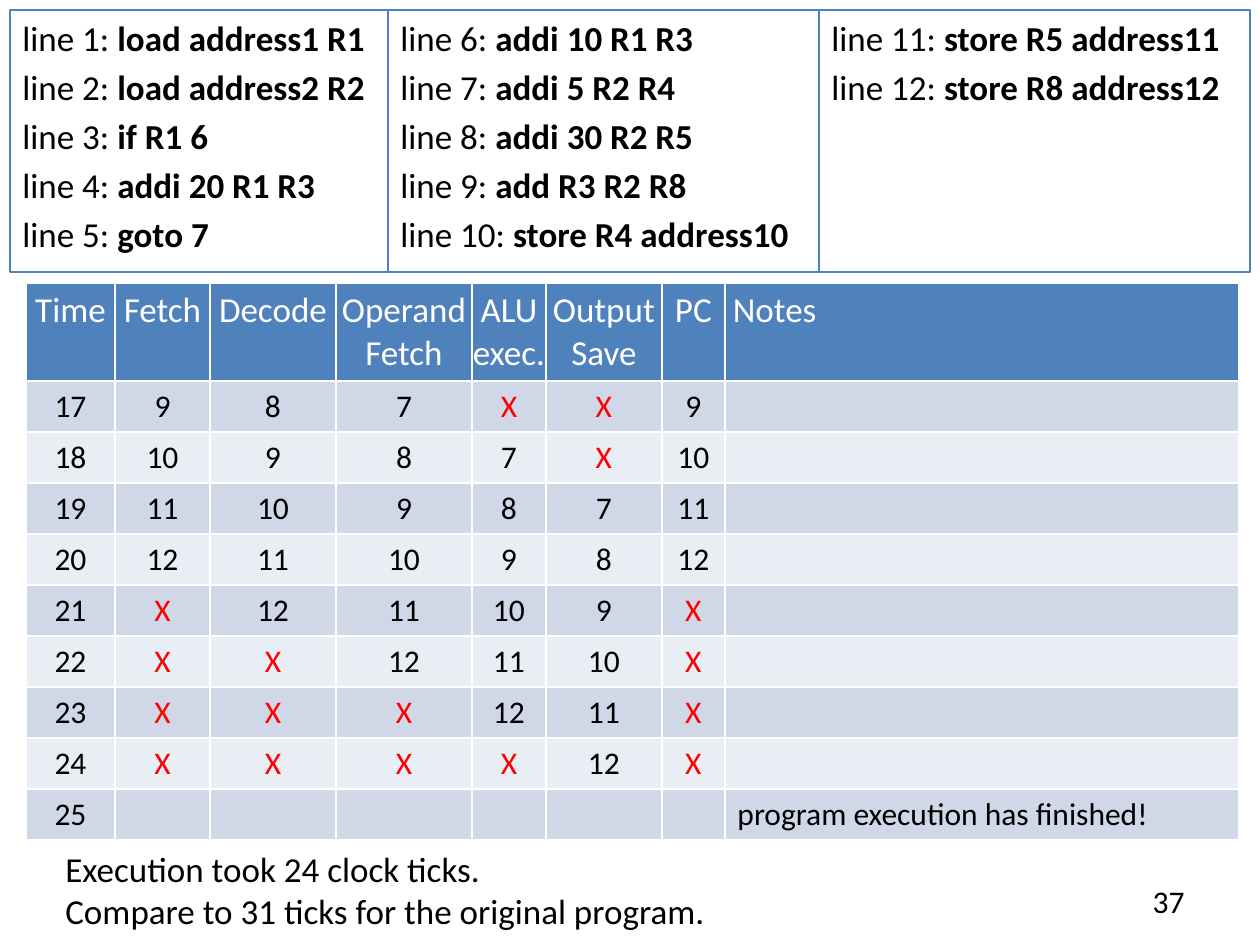
from pptx import Presentation
from pptx.dml.color import RGBColor
from pptx.enum.shapes import MSO_SHAPE
from pptx.enum.text import MSO_ANCHOR as Anchor, MSO_AUTO_SIZE as Auto, PP_ALIGN as Align
from pptx.util import Pt

FONT = "Calibri"
BLUE, BLACK, WHITE, RED = "4F81BD", "000000", "FFFFFF", "FF0000"
BANDS = "D0D8E8", "E9EDF4"

# (left, width, first line number, commands)
CODE = [
    (10, 378, 1, ["load address1 R1", "load address2 R2", "if R1 6",
                  "addi 20 R1 R3", "goto 7"]),
    (388, 431, 6, ["addi 10 R1 R3", "addi 5 R2 R4", "addi 30 R2 R5",
                   "add R3 R2 R8", "store R4 address10"]),
    (819, 431, 11, ["store R5 address11", "store R8 address12"]),
]
COLS = [("Time", 89), ("Fetch", 95), ("Decode", 126), ("Operand Fetch", 136),
        ("ALU exec.", 74), ("Output Save", 116), ("PC", 63), (" Notes", 514)]
TICKS = [
    "17 9 8 7 X X 9",
    "18 10 9 8 7 X 10",
    "19 11 10 9 8 7 11",
    "20 12 11 10 9 8 12",
    "21 X 12 11 10 9 X",
    "22 X X 12 11 10 X",
    "23 X X X 12 11 X",
    "24 X X X X 12 X",
    "25",
]
DONE = "program execution has finished!"
SUMMARY = "Execution took 24 clock ticks. \vCompare to 31 ticks for the original program."
PAGE = "37"
HEAD, ROW = 98, 51


def px(n):
    return round(n * 914400 / 126)


def box(*sides):
    return [px(n) for n in sides]


def rgb(code):
    return RGBColor.from_string(code)


def style(para, size, color=BLACK, align=Align.LEFT):
    font = para.font
    font.name, font.size, font.bold = FONT, Pt(size), False
    font.color.rgb = rgb(color)
    para.alignment = align


def list_code(slide, left, width, first, lines):
    shape = slide.shapes.add_shape(MSO_SHAPE.RECTANGLE, *box(left, 10, width, 262))
    shape.shadow.inherit = False
    shape.fill.background()
    shape.line.color.rgb = rgb(BLUE)
    shape.line.width = Pt(0.75)
    frame = shape.text_frame
    frame.word_wrap = True
    frame.vertical_anchor = Anchor.TOP
    for i, line in enumerate(lines):
        para = frame.add_paragraph() if i else frame.paragraphs[0]
        para.space_before = Pt(4)
        style(para, 20)
        para.add_run().text = f"line {first + i}: "
        run = para.add_run()
        run.text = line
        run.font.bold = True


def fill_cell(cell, text, fill, size, color, align):
    cell.fill.solid()
    cell.fill.fore_color.rgb = rgb(fill)
    cell.text = text
    style(cell.text_frame.paragraphs[0], size, color, align)


def draw_ticks(slide):
    wide = sum(w for _, w in COLS)
    high = HEAD + ROW * len(TICKS)
    table = slide.shapes.add_table(len(TICKS) + 1, len(COLS),
                                   *box(26, 283, wide, high)).table
    last = len(COLS) - 1
    for c, (name, width) in enumerate(COLS):
        align = Align.LEFT if c == last else Align.CENTER
        table.columns[c].width = px(width)
        cell = table.cell(0, c)
        cell.margin_left = cell.margin_right = 0
        fill_cell(cell, name, BLUE, 20, WHITE, align)
        for r, tick in enumerate(TICKS):
            vals = tick.split()
            text = vals[c] if c < len(vals) else ""
            if c == last and r == len(TICKS) - 1:
                text = DONE
            cell = table.cell(r + 1, c)
            cell.vertical_anchor = Anchor.MIDDLE
            fill_cell(cell, text, BANDS[r % 2], 18, RED if text == "X" else BLACK, align)
    for r, row in enumerate(table.rows):
        row.height = px(ROW if r else HEAD)


def add_text(slide, place, text, size, align=Align.LEFT):
    frame = slide.shapes.add_textbox(*box(*place)).text_frame
    frame.text = text
    style(frame.paragraphs[0], size, align=align)
    return frame


def main():
    deck = Presentation()
    deck.slide_width, deck.slide_height = box(1260, 945)
    slide = deck.slides.add_slide(deck.slide_layouts[6])
    page = add_text(slide, (903, 876, 294, 50), PAGE, 18, Align.RIGHT)
    page.word_wrap = True
    page.vertical_anchor = Anchor.MIDDLE
    draw_ticks(slide)
    for part in CODE:
        list_code(slide, *part)
    note = add_text(slide, (53, 841, 670, 97), SUMMARY, 20)
    note.word_wrap = False
    note.auto_size = Auto.SHAPE_TO_FIT_TEXT
    deck.save("out.pptx")


if __name__ == "__main__":
    main()
